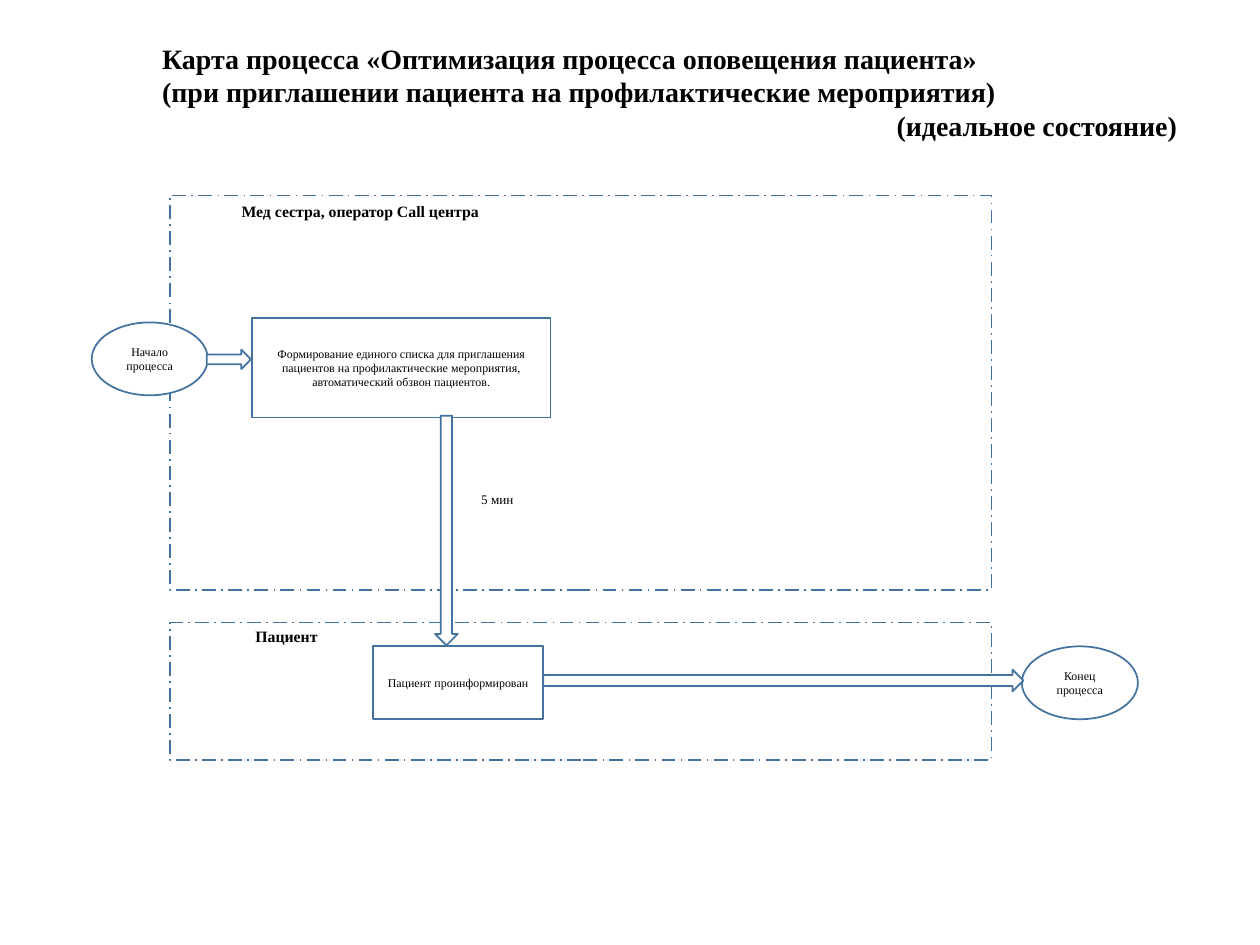
"""Build a process map slide: two swimlanes, steps, terminators and block arrows."""
from dataclasses import dataclass

from pptx import Presentation
from pptx.dml.color import RGBColor
from pptx.enum.dml import MSO_LINE
from pptx.enum.shapes import MSO_SHAPE
from pptx.enum.text import MSO_ANCHOR, PP_ALIGN
from pptx.util import Cm, Pt

FONT = "Times New Roman"
BLACK, WHITE, BLUE = "000000", "FFFFFF", "43739E"
LANE_LEFT, LANE_WIDTH = 3.43, 16.56
OVAL_WIDTH, NODE_HEIGHT = 2.34, 1.47


@dataclass
class Box:
    left: float
    top: float
    width: float
    height: float


@dataclass
class Node:
    kind: MSO_SHAPE
    box: Box
    text: str = ""
    dashed: bool = False


@dataclass
class Label:
    box: Box
    text: str
    size: float
    bold: bool = True


LANES = [
    Node(MSO_SHAPE.RECTANGLE, Box(LANE_LEFT, 12.55, LANE_WIDTH, 2.77), dashed=True),
    Node(MSO_SHAPE.RECTANGLE, Box(LANE_LEFT, 3.94, LANE_WIDTH, 7.95), dashed=True),
]
STEPS = [
    Node(MSO_SHAPE.RECTANGLE, Box(5.08, 6.41, 6.02, 2.01),
         "Формирование единого списка для приглашения пациентов на "
         "профилактические мероприятия, автоматический обзвон пациентов."),
    Node(MSO_SHAPE.RECTANGLE, Box(7.52, 13.03, 3.43, NODE_HEIGHT), "Пациент проинформирован"),
    Node(MSO_SHAPE.OVAL, Box(20.6, 13.03, OVAL_WIDTH, NODE_HEIGHT), "Конец процесса"),
    Node(MSO_SHAPE.OVAL, Box(1.85, 6.5, OVAL_WIDTH, NODE_HEIGHT), "Начало процесса"),
]
ARROWS = [
    Node(MSO_SHAPE.DOWN_ARROW, Box(8.77, 8.38, 0.46, 4.63)),
    Node(MSO_SHAPE.RIGHT_ARROW, Box(10.95, 13.5, 9.68, 0.44)),
    Node(MSO_SHAPE.RIGHT_ARROW, Box(4.17, 7.05, 0.89, 0.39)),
]
LABELS = [
    Label(Box(4.62, 3.94, 6.5, 0.84), "Мед сестра, оператор Call центра", 9),
    Label(Box(4.9, 12.52, 2.36, 0.84), "Пациент", 9),
    Label(Box(9.45, 9.78, 1.5, 0.76), "5 мин", 7.5, bold=False),
]
TITLE = Label(
    Box(3.02, 0.71, 20.96, 2.31),
    "Карта процесса «Оптимизация процесса оповещения пациента»\n"
    "(при приглашении пациента на профилактические мероприятия)\n"
    "(идеальное состояние)", 16)


def color(value: str) -> RGBColor:
    """Turn a hex string into a colour."""
    return RGBColor.from_string(value)


def place(box: Box) -> tuple:
    """Give the position and size of a box as lengths."""
    return Cm(box.left), Cm(box.top), Cm(box.width), Cm(box.height)


def write(tf, text: str, size: float, bold: bool, align: PP_ALIGN) -> None:
    """Fill a text frame and format its runs."""
    tf.word_wrap = True
    tf.text = text
    for p in tf.paragraphs:
        p.alignment = align
        for r in p.runs:
            r.font.name, r.font.size, r.font.bold = FONT, Pt(size), bold
            r.font.color.rgb = color(BLACK)


def draw_node(s, node: Node) -> None:
    """Draw one outlined white shape with optional centred text."""
    sp = s.shapes.add_shape(node.kind, *place(node.box))
    sp.shadow.inherit = False
    sp.fill.solid()
    sp.fill.fore_color.rgb = color(WHITE)
    sp.line.color.rgb = color(BLUE)
    sp.line.width = Pt(1)
    if node.dashed:
        sp.line.dash_style = MSO_LINE.LONG_DASH_DOT
    if node.text:
        sp.text_frame.vertical_anchor = MSO_ANCHOR.MIDDLE
        write(sp.text_frame, node.text, 6.8, False, PP_ALIGN.CENTER)


def draw_label(s, label: Label):
    """Draw one text box and return its text frame."""
    tf = s.shapes.add_textbox(*place(label.box)).text_frame
    write(tf, label.text, label.size, label.bold, PP_ALIGN.LEFT)
    return tf


def main() -> None:
    """Build and save the slide."""
    prs = Presentation()
    prs.slide_width, prs.slide_height = Cm(25.4), Cm(19.05)
    s = prs.slides.add_slide(prs.slide_layouts[6])
    for node in LANES + STEPS + ARROWS:
        draw_node(s, node)
    for label in LABELS:
        draw_label(s, label)
    draw_label(s, TITLE).paragraphs[-1].alignment = PP_ALIGN.RIGHT
    prs.save("out.pptx")


if __name__ == "__main__":
    main()
